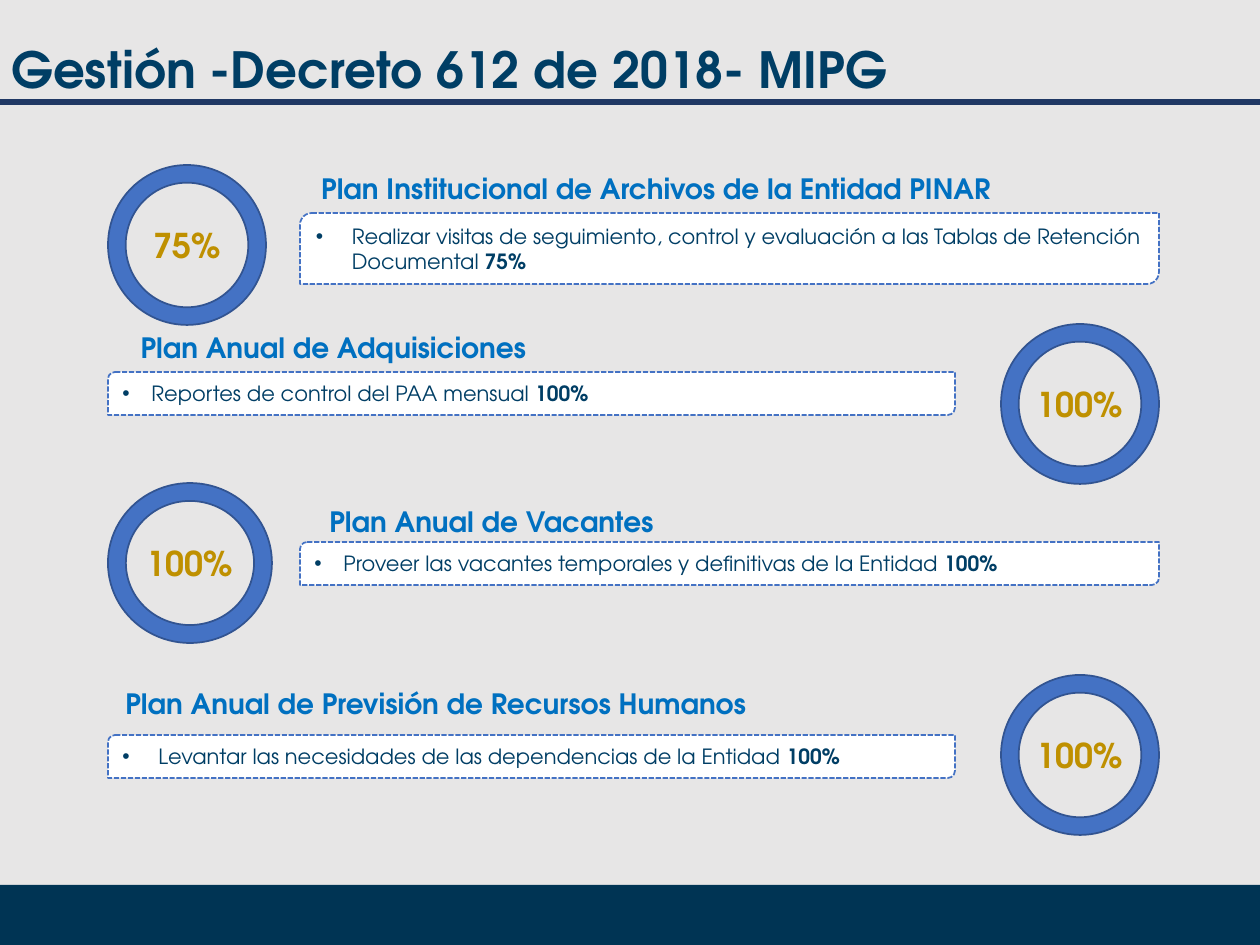
from dataclasses import dataclass

from lxml.etree import SubElement
from pptx import Presentation
from pptx.dml.color import RGBColor
from pptx.enum.dml import MSO_LINE
from pptx.enum.shapes import MSO_CONNECTOR, MSO_SHAPE
from pptx.enum.text import MSO_ANCHOR, PP_ALIGN
from pptx.oxml.ns import qn
from pptx.util import Pt

EMU_PER_PX = 914400 / 126
FONT = "TeX Gyre Adventor"
COLORS = {
    "background": "E7E6E6", "footer": "003454", "rule": "203864",
    "navy": "003E65", "heading": "0070C0", "percent": "BF9000",
    "ring": "4472C4", "ring_edge": "325491", "white": "FFFFFF",
}
RING_WIDTH, RING_HEIGHT = 158, 160


@dataclass
class Plan:
    """Content and inner layout of one plan section."""
    top: int
    heading: str
    heading_box: tuple
    note: str
    percent: str
    note_top: int
    ring_side: str = "left"
    ring_width: int = RING_WIDTH
    note_height: int = 43
    indent: int = 29
    align: PP_ALIGN = PP_ALIGN.CENTER


PLANS = [
    Plan(165, "Plan Institucional de Archivos de la Entidad PINAR", (192, 0, 712, 47),
         "Realizar visitas de seguimiento, control y evaluación a las Tablas de Retención Documental ",
         "75%", 48, note_height=71, indent=36),
    Plan(324, "Plan Anual de Adquisiciones", (19, 0, 413, 47),
         "Reportes de control del PAA mensual ", "100%", 48, ring_side="right"),
    Plan(483, "Plan Anual de Vacantes", (192, 15, 383, 47),
         "Proveer las vacantes temporales y definitivas de la Entidad ", "100%", 59,
         ring_width=164),
    Plan(675, "Plan Anual de Previsión de Recursos Humanos", (5, 5, 806, 47),
         "Levantar las necesidades de las dependencias de la Entidad ", "100%", 60,
         ring_side="right", indent=36, align=PP_ALIGN.LEFT),
]


def emu(*pixels):
    """Turn px lengths into EMU."""
    return [round(value * EMU_PER_PX) for value in pixels]


def color(name):
    """Look up a named colour."""
    return RGBColor.from_string(COLORS[name])


def add_run(paragraph, text, size, fill, bold=False):
    """Append a formatted run to a paragraph."""
    run = paragraph.add_run()
    run.text = text
    run.font.name = FONT
    run.font.size = Pt(size)
    run.font.bold = bold
    run.font.color.rgb = color(fill)


def add_text(slide, text, box, size, fill, align=PP_ALIGN.LEFT, anchor=MSO_ANCHOR.TOP, wrap=True):
    """Add a text box holding one bold line."""
    shape = slide.shapes.add_textbox(*emu(*box))
    frame = shape.text_frame
    frame.word_wrap = wrap
    frame.vertical_anchor = anchor
    paragraph = frame.paragraphs[0]
    paragraph.alignment = align
    add_run(paragraph, text, size, fill, bold=True)


def add_preset(slide, kind, box, fill, edge=None):
    """Add a filled preset shape, outlined when an edge colour is given."""
    shape = slide.shapes.add_shape(kind, *emu(*box))
    shape.shadow.inherit = False
    shape.fill.solid()
    shape.fill.fore_color.rgb = color(fill)
    if edge:
        shape.line.color.rgb = color(edge)
        shape.line.width = Pt(1)
    else:
        shape.line.fill.background()
    return shape


def add_ring(slide, percent, box):
    """Draw a ring with its percentage in the middle."""
    left, top, width, _ = box
    ring = add_preset(slide, MSO_SHAPE.DONUT, box, "ring", "ring_edge")
    ring.adjustments[0] = 0.112
    add_text(slide, percent, (left, top + 53, width, 54), 19.5, "percent", PP_ALIGN.CENTER)


def add_note(slide, plan, box):
    """Draw the dashed box with its bulleted progress line."""
    shape = add_preset(slide, MSO_SHAPE.ROUND_2_DIAG_RECTANGLE, box, "white", "ring")
    shape.line.dash_style = MSO_LINE.SQUARE_DOT
    frame = shape.text_frame
    frame.word_wrap = True
    frame.vertical_anchor = MSO_ANCHOR.MIDDLE
    paragraph = frame.paragraphs[0]
    paragraph.alignment = PP_ALIGN.LEFT
    properties = paragraph._p.get_or_add_pPr()
    indent = emu(plan.indent)[0]
    properties.set("marL", str(indent))
    properties.set("indent", str(-indent))
    SubElement(properties, qn("a:buFont"), typeface="Arial")
    SubElement(properties, qn("a:buChar"), char="•")
    add_run(paragraph, plan.note, 12, "navy")
    add_run(paragraph, plan.percent, 12, "navy", bold=True)


def add_plan(slide, plan, left, width):
    """Place ring, heading and note of one plan within its band."""
    ring_on_left = plan.ring_side == "left"
    ring_left = left if ring_on_left else left + width - plan.ring_width
    note_left, note_width = (left + 192, width - 192) if ring_on_left else (left, width - 204)
    heading_left, heading_top, *heading_size = plan.heading_box
    add_note(slide, plan, (note_left, plan.top + plan.note_top, note_width, plan.note_height))
    add_text(slide, plan.heading, (left + heading_left, plan.top + heading_top, *heading_size),
             16, "heading", plan.align)
    add_ring(slide, plan.percent, (ring_left, plan.top, plan.ring_width, RING_HEIGHT))


def add_frame(slide, width, height):
    """Draw the background, footer band, title and its rule."""
    slide.background.fill.solid()
    slide.background.fill.fore_color.rgb = color("background")
    add_preset(slide, MSO_SHAPE.RECTANGLE, (0, height - 60, width, 60), "footer")
    rule = slide.shapes.add_connector(MSO_CONNECTOR.STRAIGHT, *emu(0, 102, width, 102))
    rule.line.color.rgb = color("rule")
    rule.line.width = Pt(3)
    SubElement(rule._element.spPr, qn("a:effectLst"))
    add_text(slide, "Gestión -Decreto 612 de 2018- MIPG", (-1, 37, 1063, 64), 28.5, "navy",
             anchor=MSO_ANCHOR.MIDDLE)


def main():
    """Build and save the presentation."""
    width, height = 1260, 945
    presentation = Presentation()
    presentation.slide_width, presentation.slide_height = emu(width, height)
    slide = presentation.slides.add_slide(presentation.slide_layouts[6])
    add_frame(slide, width, height)
    for plan in PLANS:
        add_plan(slide, plan, left=108, width=1051)
    presentation.save("out.pptx")


if __name__ == "__main__":
    main()
